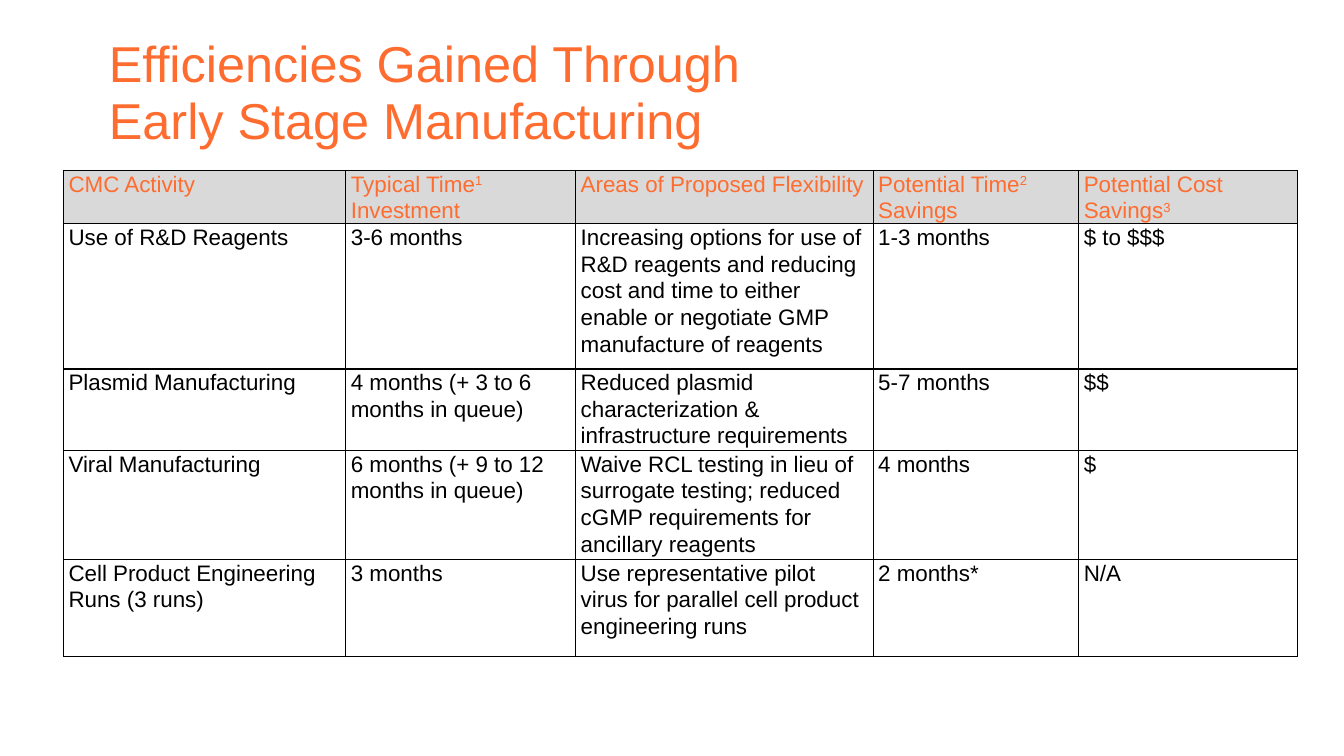
from lxml import etree
from pptx import Presentation
from pptx.dml.color import RGBColor
from pptx.enum.text import MSO_ANCHOR, MSO_AUTO_SIZE, PP_ALIGN
from pptx.oxml.ns import qn
from pptx.util import Inches, Pt

LEFT = PP_ALIGN.LEFT
TOP = MSO_ANCHOR.TOP
NO_AUTOFIT = MSO_AUTO_SIZE.NONE
ORANGE = RGBColor(0xFF, 0x6C, 0x2F)
BLACK = RGBColor(0, 0, 0)
GREY = RGBColor(0xD9, 0xD9, 0xD9)
FONT = "Arial"
TITLE_ONLY = 5

COL_WIDTHS = [2.8, 2.28, 2.95, 2.04, 2.17]
ROW_HEIGHTS = [0.53, 1.44, 0.81, 1.08, 0.96]
# Text between carets is superscript.
ROWS = [
    ["CMC Activity", "Typical Time^1 ^Investment",
     "Areas of Proposed Flexibility", "Potential Time^2^ Savings",
     "Potential Cost Savings^3^"],
    ["Use of R&D Reagents", "3-6 months",
     "Increasing options for use of R&D reagents and reducing cost and time "
     "to either enable or negotiate GMP manufacture of reagents",
     "1-3 months", "$ to $$$"],
    ["Plasmid Manufacturing", "4 months (+ 3 to 6 months in queue)",
     "Reduced plasmid characterization & infrastructure requirements",
     "5-7 months", "$$"],
    ["Viral Manufacturing", "6 months (+ 9 to 12 months in queue)",
     "Waive RCL testing in lieu of surrogate testing; reduced cGMP "
     "requirements for ancillary reagents",
     "4 months", "$"],
    ["Cell Product Engineering Runs (3 runs)", "3 months",
     "Use representative pilot virus for parallel cell product engineering runs",
     "2 months*", "N/A"],
]


def style_font(font, size, color):
    font.name = FONT
    font.size = Pt(size)
    font.bold = False
    font.color.rgb = color


def set_title(s, text):
    sp = s.shapes.title
    sp.left, sp.top = Inches(0.98), Inches(0.31)
    sp.width, sp.height = Inches(11.33), Inches(1.49)
    tf = sp.text_frame
    tf.text = text
    tf.word_wrap = True
    tf.auto_size = NO_AUTOFIT
    tf.vertical_anchor = TOP
    p = tf.paragraphs[0]
    p.alignment = LEFT
    p.line_spacing = 0.95
    for r in p.runs:
        style_font(r.font, 36, ORANGE)


def add_borders(cell):
    tcPr = cell._tc.get_or_add_tcPr()
    for i, side in enumerate(("lnL", "lnR", "lnT", "lnB")):
        ln = etree.Element(qn(f"a:{side}"), w=str(Pt(1)))
        fill = etree.SubElement(ln, qn("a:solidFill"))
        etree.SubElement(fill, qn("a:srgbClr"), val=str(BLACK))
        tcPr.insert(i, ln)


def fill_cell(cell, text, is_header):
    cell.margin_left = cell.margin_right = Inches(0.05)
    cell.margin_top = cell.margin_bottom = 0
    cell.vertical_anchor = TOP
    if is_header:
        cell.fill.solid()
        cell.fill.fore_color.rgb = GREY
    else:
        cell.fill.background()
    add_borders(cell)
    p = cell.text_frame.paragraphs[0]
    p.alignment = LEFT
    p.line_spacing = 1.07
    for i, part in enumerate(text.split("^")):
        if part:
            r = p.add_run()
            r.text = part
            style_font(r.font, 16, ORANGE if is_header else BLACK)
            if i % 2:
                r.font._element.set("baseline", "30000")


def add_activity_table(s):
    frame = s.shapes.add_table(
        len(ROWS), len(COL_WIDTHS), Inches(0.63), Inches(1.69),
        Inches(sum(COL_WIDTHS)), Inches(sum(ROW_HEIGHTS)))
    table = frame.table
    table.horz_banding = False
    for column, width in zip(table.columns, COL_WIDTHS):
        column.width = Inches(width)
    for i, (row, height) in enumerate(zip(table.rows, ROW_HEIGHTS)):
        row.height = Inches(height)
        for cell, text in zip(row.cells, ROWS[i]):
            fill_cell(cell, text, is_header=i == 0)


def main():
    prs = Presentation()
    prs.slide_width, prs.slide_height = Inches(13.33), Inches(7.5)
    s = prs.slides.add_slide(prs.slide_layouts[TITLE_ONLY])
    set_title(s, "Efficiencies Gained Through\vEarly Stage Manufacturing")
    add_activity_table(s)
    prs.save("out.pptx")


if __name__ == "__main__":
    main()
